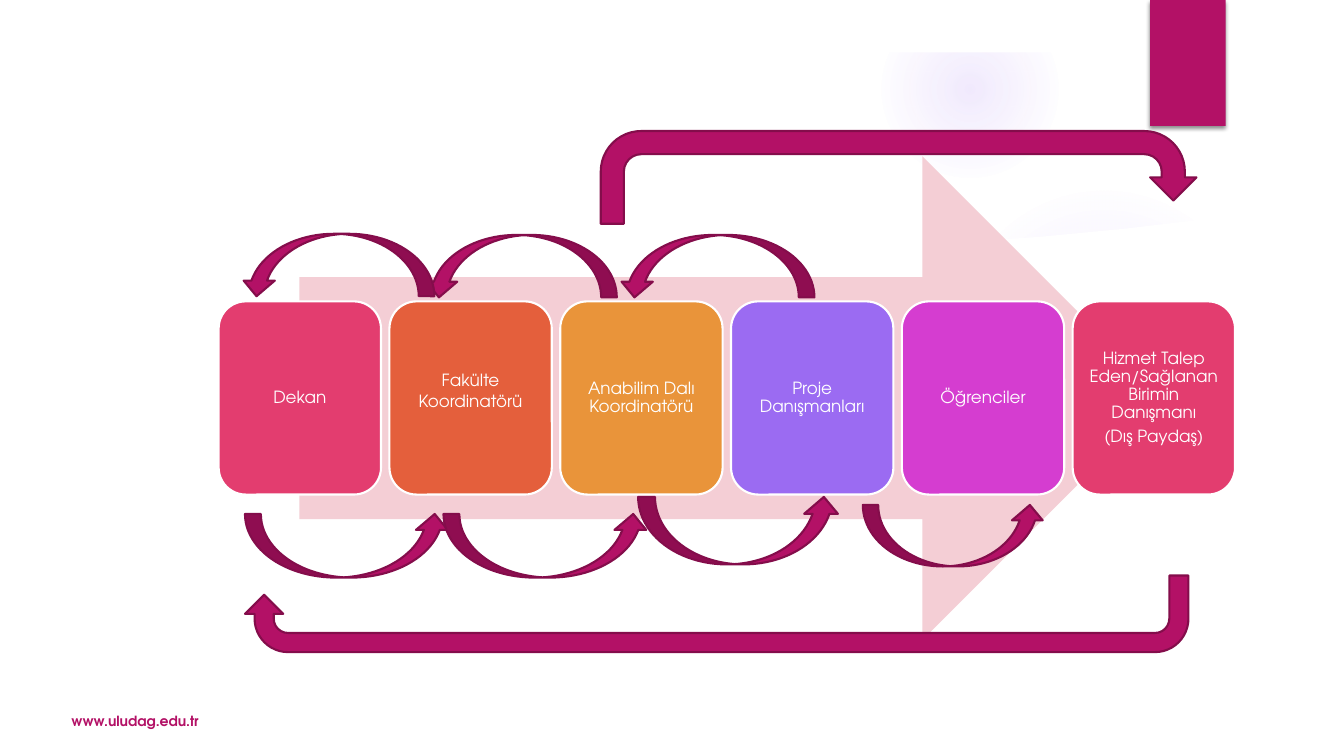
from dataclasses import dataclass

from pptx import Presentation
from pptx.dml.color import RGBColor
from pptx.enum.shapes import MSO_SHAPE as Kind
from pptx.enum.text import MSO_ANCHOR as Anchor, PP_ALIGN as Align
from pptx.oxml import parse_xml
from pptx.oxml.ns import nsdecls, qn
from pptx.util import Pt

ROLES = [
    (["Dekan"], "E33D6F"),
    (["Fakülte Koordinatörü"], "E45F3C"),
    (["Anabilim Dalı Koordinatörü"], "E9943A"),
    (["Proje Danışmanları"], "9B6BF2"),
    (["Öğrenciler"], "D53DD0"),
    (["Hizmet Talep Eden/Sağlanan Birimin Danışmanı", "(Dış Paydaş)"], "E33D6F"),
]
RAISED_ROLE = 1
WEB_ADDRESS = "www.uludag.edu.tr"

GLOWS = [
    ((677.5, 131.8, 221.8, 221.8), [(0, 7), (36, 6), (69, 0)]),
    ((630, 0.7, 126, 126), [(0, 14), (36, 7), (73, 0)]),
]
WAVE_COVER = [(677, 173.7), (743, 169.2), (803.5, 163.4), (864, 156.2),
              (924.5, 146.9), (924.5, 360), (677, 360)]
TOP_MARGIN = (0, 0, 960, 37.4)
CORNER_TAB = (821.5, 0, 54, 90)
FLOW_ARROW = (213.8, 111.6, 617.8, 345.6)
ADDRESS_BOX = (43.9, 503.3, 303.8, 23.8)

LONG_ARROWS = [
    ((429.1, 93.6, 425.5, 66.2), 0),
    ((175, 411.1, 673.9, 54.7), 180),
]
STEP_ARROWS = [
    ((175, 367.2, 146.9, 45.4), "flipV"),
    ((455.8, 355, 144.7, 48.2), "flipV"),
    ((616.3, 360.7, 130.3, 43.9), "flipV"),
    ((442.1, 167.8, 139.7, 44.6), "flipH"),
    ((302.4, 167.8, 138.2, 44.6), "flipH"),
    ((316.8, 367.2, 146.9, 45.4), "flipV"),
    ((172.1, 167, 138.2, 44.6), "flipH"),
]

CARD_LEFT, CARD_TOP, CARD_WIDTH, CARD_HEIGHT = 156.2, 215.3, 116, 138
CARD_PITCH = CARD_WIDTH + 6
CARD_INSET = 3.6
RAISE = 11


@dataclass(frozen=True)
class Theme:
    font: str = "TeX Gyre Adventor"
    white: str = "FFFFFF"
    accent: str = "B31166"
    accent_edge: str = "840D4B"
    pale: str = "F4CED5"
    glow: str = "9B6BF2"
    shadow: str = "000000"
    card_size: float = 12
    address_size: float = 10
    line_width: float = 1.5


THEME = Theme()


def apply(target, values):
    for name, value in values.items():
        setattr(target, name, value)


def paint(shape, fill, line=None):
    shape.shadow.inherit = False
    shape.fill.solid()
    shape.fill.fore_color.rgb = RGBColor.from_string(fill)
    if line:
        shape.line.color.rgb = RGBColor.from_string(line)
        shape.line.width = Pt(THEME.line_width)
    else:
        shape.line.fill.background()
    return shape


def add_part(page, kind, place, fill, line=None):
    shape = page.shapes.add_shape(kind, *map(Pt, place))
    return paint(shape, fill, line)


def write(shape, lines, frame_format, para_format, font_format, colour):
    frame = shape.text_frame
    apply(frame, {"word_wrap": True, "vertical_anchor": Anchor.MIDDLE, **frame_format})
    for index, line in enumerate(lines):
        para = frame.add_paragraph() if index else frame.paragraphs[0]
        apply(para, para_format)
        span = para.add_run()
        span.text = line
        apply(span.font, {"name": THEME.font, **font_format})
        span.font.color.rgb = RGBColor.from_string(colour)


def add_glow(page, place, stops):
    shape = add_part(page, Kind.OVAL, place, THEME.glow)
    marks = "".join(
        f'<a:gs pos="{position * 1000}"><a:srgbClr val="{THEME.glow}">'
        f'<a:alpha val="{alpha * 1000}"/></a:srgbClr></a:gs>'
        for position, alpha in stops + [(100, 0)])
    gradient = parse_xml(
        f'<a:gradFill {nsdecls("a")} rotWithShape="1"><a:gsLst>{marks}</a:gsLst>'
        '<a:path path="circle"><a:fillToRect l="50000" t="50000" r="50000" b="50000"/>'
        '</a:path></a:gradFill>')
    properties = shape.element.spPr
    properties.replace(properties.find(qn("a:solidFill")), gradient)


def add_background(page):
    for place, stops in GLOWS:
        add_glow(page, place, stops)
    points = [(Pt(x), Pt(y)) for x, y in WAVE_COVER]
    builder = page.shapes.build_freeform(*points[0])
    builder.add_line_segments(points[1:])
    paint(builder.convert_to_shape(), THEME.white)
    add_part(page, Kind.RECTANGLE, TOP_MARGIN, THEME.white)
    tab = add_part(page, Kind.RECTANGLE, CORNER_TAB, THEME.accent)
    tab.element.spPr.find(qn("a:effectLst")).append(parse_xml(
        f'<a:outerShdw {nsdecls("a")} blurRad="{Pt(3)}" dist="{Pt(2)}" dir="5400000" '
        f'rotWithShape="0"><a:srgbClr val="{THEME.shadow}"><a:alpha val="45000"/>'
        '</a:srgbClr></a:outerShdw>'))


def add_cards(page):
    for index, (lines, colour) in enumerate(ROLES):
        raised = index == RAISED_ROLE
        place = (CARD_LEFT + index * CARD_PITCH, CARD_TOP, CARD_WIDTH, CARD_HEIGHT)
        card = add_part(page, Kind.ROUNDED_RECTANGLE, place, colour, THEME.white)
        insets = {f"margin_{side}": Pt(CARD_INSET)
                  for side in ("left", "top", "right", "bottom")}
        if raised:
            insets["margin_bottom"] = Pt(CARD_INSET + RAISE)
        para_format = {"alignment": Align.CENTER, "space_after": Pt(4.2),
                       "line_spacing": 1.0 if raised else 0.9}
        write(card, lines, insets, para_format, {"size": Pt(THEME.card_size)}, THEME.white)


def add_arrows(page):
    for place, rotation in LONG_ARROWS:
        arrow = add_part(page, Kind.U_TURN_ARROW, place, THEME.accent, THEME.accent_edge)
        arrow.rotation = rotation
    for place, flip in STEP_ARROWS:
        arrow = add_part(page, Kind.CURVED_DOWN_ARROW, place, THEME.accent, THEME.accent_edge)
        arrow.element.spPr.get_or_add_xfrm().set(flip, "1")


def main():
    deck = Presentation()
    apply(deck, {"slide_width": Pt(960), "slide_height": Pt(540)})
    page = deck.slides.add_slide(deck.slide_layouts[6])
    add_background(page)
    add_part(page, Kind.RIGHT_ARROW, FLOW_ARROW, THEME.pale)
    add_cards(page)
    box = page.shapes.add_textbox(*map(Pt, ADDRESS_BOX))
    write(box, [WEB_ADDRESS], {}, {"alignment": Align.LEFT},
          {"size": Pt(THEME.address_size), "bold": True}, THEME.accent)
    add_arrows(page)
    deck.save("out.pptx")


if __name__ == "__main__":
    main()
